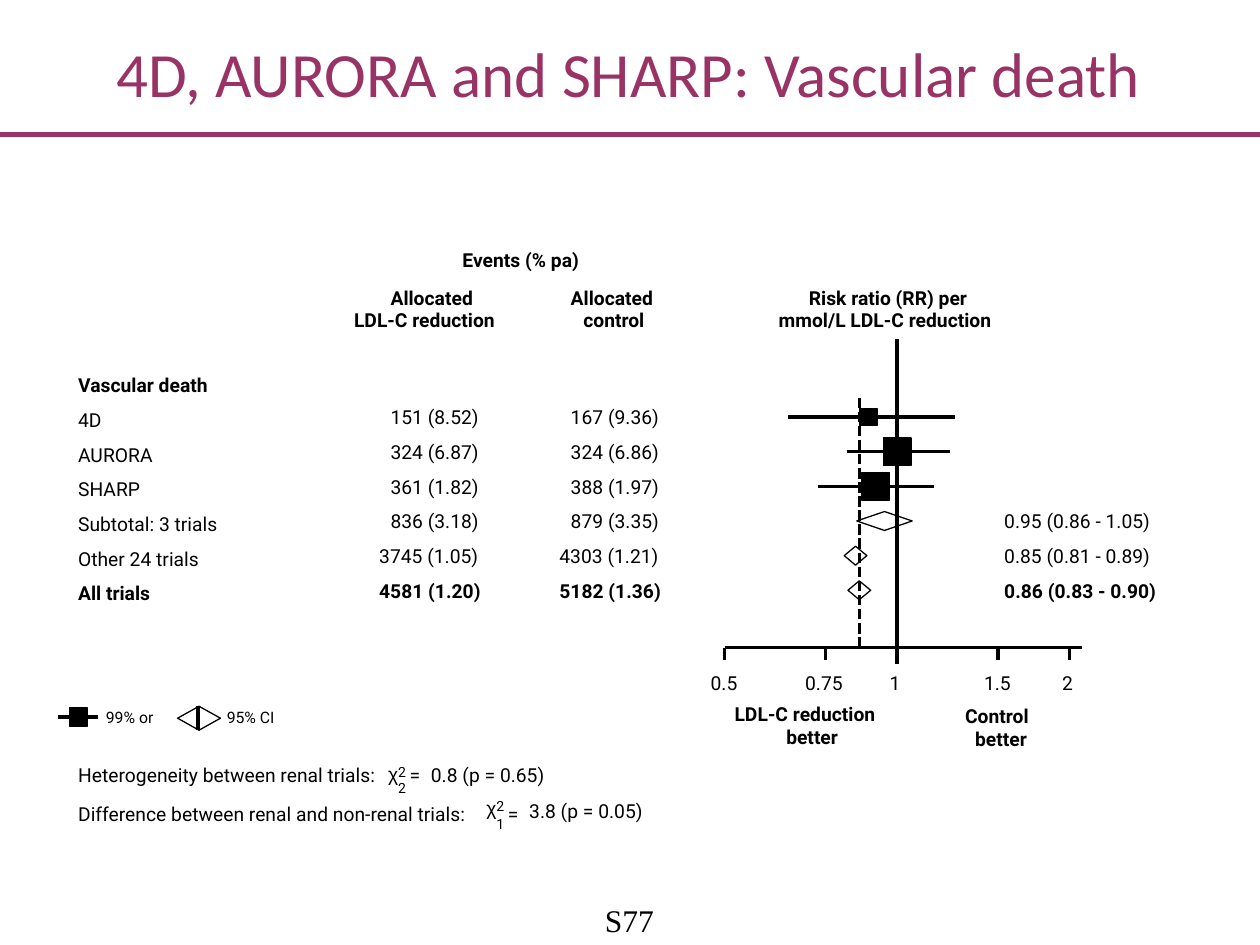
from dataclasses import dataclass
from math import log2
from typing import Optional

from lxml import etree
from pptx import Presentation
from pptx import util as u
from pptx.dml.color import RGBColor
from pptx.enum import dml, shapes, text
from pptx.oxml.ns import qn

COLOURS = {"ink": "000000", "accent": "993366", "paper": "FFFFFF"}
LEFT, CENTRE = text.PP_ALIGN.LEFT, text.PP_ALIGN.CENTER
SQUARE, DIAMOND = shapes.MSO_SHAPE.RECTANGLE, shapes.MSO_SHAPE.DIAMOND
PITCH = 0.275
NAME_LEFT, RATIO_LEFT = 0.62, 7.97
AXIS_Y = 5.14
UNITY_X = 7.12
DOUBLING = 1.37


@dataclass(frozen=True)
class Label:
    """A heading line and its place."""
    words: str
    left: float
    top: float
    width: float


@dataclass(frozen=True)
class Trial:
    """A row of the forest plot; side is set only for trials drawn as squares."""
    name: str
    reduction: str
    control: str
    low: float
    high: float
    centre: float = 0
    side: float = 0
    ratio: Optional[str] = None
    bold: bool = False


@dataclass(frozen=True)
class Test:
    """A chi-squared result under the plot."""
    words: str
    width: float
    top: float
    chi_left: float
    chi_top: float
    freedom: str
    freedom_top: float
    result: str
    result_top: float


@dataclass(frozen=True)
class Tick:
    """An axis value and the place of its label."""
    value: float
    left: float
    width: float


HEADINGS = [
    Label("Events (% pa)", 3.67, 1.97, 1.28),
    Label("Allocated", 3.1, 2.27, 0.9),
    Label("LDL-C reduction", 2.81, 2.45, 1.49),
    Label("Allocated", 4.53, 2.27, 0.9),
    Label("control", 4.63, 2.45, 0.7),
    Label("Risk ratio (RR) per", 6.42, 2.27, 1.67),
    Label("mmol/L LDL-C reduction", 6.18, 2.45, 2.19),
    Label("LDL-C reduction", 5.83, 5.57, 1.49),
    Label("better", 6.24, 5.76, 0.59),
    Label("Vascular death", NAME_LEFT, 2.96, 1.39),
]
TRIALS = [
    Trial("4D", "151 (8.52)", "167 (9.36)", 6.25, 7.58, 6.89, 0.14),
    Trial("AURORA", "324 (6.87)", "324 (6.86)", 6.72, 7.54, 7.12, 0.22),
    Trial("SHARP", "361 (1.82)", "388 (1.97)", 6.49, 7.41, 6.95, 0.22),
    Trial("Subtotal: 3 trials", "836 (3.18)", "879 (3.35)", 6.8, 7.24,
          ratio="0.95 (0.86 - 1.05)"),
    Trial("Other 24 trials", "3745 (1.05)", "4303 (1.21)", 6.7, 6.88,
          ratio="0.85 (0.81 - 0.89)"),
    Trial("All trials", "4581 (1.20)", "5182 (1.36)", 6.73, 6.91,
          ratio="0.86 (0.83 - 0.90)", bold=True),
]
TICKS = [Tick(0.5, 5.64, 0.32), Tick(0.75, 6.39, 0.43), Tick(1, 7.06, 0.18),
         Tick(1.5, 7.81, 0.32), Tick(2, 8.43, 0.18)]
TESTS = [
    Test("Heterogeneity between renal trials:", 2.91, 6.06, 3.08, 6.05,
         "2", 6.19, "0.8 (p = 0.65)", 6.06),
    Test("Difference between renal and non-renal trials:", 3.78, 6.37, 3.86, 6.32,
         "1", 6.47, "3.8 (p = 0.05)", 6.34),
]


def colour(name: str) -> RGBColor:
    """Look up a colour by its name."""
    return RGBColor.from_string(COLOURS[name])


def put_text(page, words: str, left: float, top: float, width: float, *,
             height: float = 0.19, size: float = 11, font: str = "Roboto",
             ink: str = "ink", bold: bool = False, wrap: bool = True,
             aligns: tuple = (LEFT,)) -> None:
    """Add a text box with one paragraph for each alignment."""
    box = page.shapes.add_textbox(*map(u.Inches, (left, top, width, height)))
    frame = box.text_frame
    frame.margin_left = frame.margin_right = frame.margin_top = frame.margin_bottom = 0
    frame.word_wrap = wrap
    frame.auto_size = text.MSO_AUTO_SIZE.SHAPE_TO_FIT_TEXT
    frame.text = words
    for para, align in zip(frame.paragraphs, aligns):
        para.alignment = align
        for span in para.runs:
            span.font.name = font
            span.font.size = u.Pt(size)
            span.font.bold = bold
            span.font.color.rgb = colour(ink)


def put_line(page, x1: float, y1: float, x2: float, y2: float, *,
             ink: str = "ink", weight: float = 0, dash=None) -> None:
    """Add a straight line without shadow."""
    line = page.shapes.add_connector(
        shapes.MSO_CONNECTOR.STRAIGHT, *map(u.Inches, (x1, y1, x2, y2)))
    line.line.color.rgb = colour(ink)
    line.line.width = u.Pt(weight)
    if dash is not None:
        line.line.dash_style = dash
    etree.SubElement(line._element.spPr, qn("a:effectLst"))


def put_marker(page, kind, x: float, y: float, width: float, height: float,
               fill: Optional[str] = None) -> None:
    """Add a hairline marker centred on a point."""
    marker = page.shapes.add_shape(
        kind, *map(u.Inches, (x - width / 2, y - height / 2, width, height)))
    marker.shadow.inherit = False
    if fill:
        marker.fill.solid()
        marker.fill.fore_color.rgb = colour(fill)
    else:
        marker.fill.background()
    marker.line.color.rgb = colour("ink")
    marker.line.width = u.Pt(0)


def put_trial(page, trial: Trial, row: int) -> None:
    """Draw the words and the estimate of one row."""
    shift = row * PITCH
    middle = 3.31 + shift
    put_text(page, trial.name, NAME_LEFT, 3.24 + shift, 1.4, bold=trial.bold)
    for words, left in ((trial.reduction, 3.1), (trial.control, 4.53)):
        indent = 0.09 if len(words) > 10 else 0
        put_text(page, words, left - indent, 3.22 + shift, 1, bold=trial.bold)
    if trial.ratio:
        put_text(page, trial.ratio, RATIO_LEFT, 3.22 + shift, 1.48, bold=trial.bold)
    if trial.side:
        put_marker(page, SQUARE, trial.centre, middle, trial.side, trial.side, "ink")
        put_line(page, trial.low, middle, trial.high, middle)
    else:
        put_marker(page, DIAMOND, (trial.low + trial.high) / 2, middle,
                   trial.high - trial.low, 0.15)


def put_axis(page) -> None:
    """Draw the logarithmic axis with its reference lines."""
    put_line(page, UNITY_X, 5.27, UNITY_X, 2.69)
    put_line(page, 5.75, AXIS_Y, 8.59, AXIS_Y)
    for tick in TICKS:
        x = UNITY_X + DOUBLING * log2(tick.value)
        put_line(page, x, AXIS_Y, x, AXIS_Y + 0.1)
        put_text(page, f"{tick.value:g}", tick.left, 5.33, tick.width)
    put_line(page, 6.82, AXIS_Y, 6.82, 3.16, dash=dml.MSO_LINE.SQUARE_DOT)


def put_legend(page) -> None:
    """Draw the key to the markers."""
    put_marker(page, SQUARE, 0.62, 5.69, 0.14, 0.15, "ink")
    put_line(page, 0.46, 5.69, 0.78, 5.69)
    put_text(page, "99% or", 0.84, 5.62, 0.45, height=0.15, size=9)
    put_marker(page, DIAMOND, 1.58, 5.7, 0.34, 0.19, "paper")
    put_line(page, 1.57, 5.79, 1.57, 5.6)
    put_text(page, "95% CI", 1.8, 5.62, 0.47, height=0.15, size=9)


def put_test(page, test: Test) -> None:
    """Write one chi-squared result."""
    put_text(page, test.words, NAME_LEFT, test.top, test.width)
    put_text(page, "χ", test.chi_left, test.chi_top, 0.22, font="Arial")
    for words, top in ((test.freedom, test.freedom_top), ("2", test.chi_top + 0.01)):
        put_text(page, words, test.chi_left + 0.08, top, 0.11, height=0.14, size=8)
    put_text(page, "=", test.chi_left + 0.17, test.top, 0.15)
    put_text(page, test.result, test.chi_left + 0.34, test.result_top, 1.15)


def main() -> None:
    """Build the slide and save it."""
    deck = Presentation()
    deck.slide_width, deck.slide_height = u.Inches(10), u.Inches(7.5)
    page = deck.slides.add_slide(deck.slide_layouts[6])
    put_line(page, 0, 1.07, 10, 1.07, ink="accent", weight=3)
    put_text(page, "S77", 4.78, 7.15, 0.43, height=0.3, size=18,
             font="Times New Roman", wrap=False, aligns=(CENTRE,))
    put_text(page, "4D, AURORA and SHARP: Vascular death", 0.89, 0.27, 8.2, height=0.61,
             size=36, font="Calibri", ink="accent", wrap=False, aligns=(CENTRE,))
    put_axis(page)
    for label in HEADINGS:
        put_text(page, label.words, label.left, label.top, label.width, bold=True)
    put_text(page, "Control\nbetter", 7.66, 5.59, 0.57, height=0.37, bold=True,
             aligns=(LEFT, CENTRE))
    put_legend(page)
    for row, trial in enumerate(TRIALS):
        put_trial(page, trial, row)
    for test in TESTS:
        put_test(page, test)
    deck.save("out.pptx")


if __name__ == "__main__":
    main()
